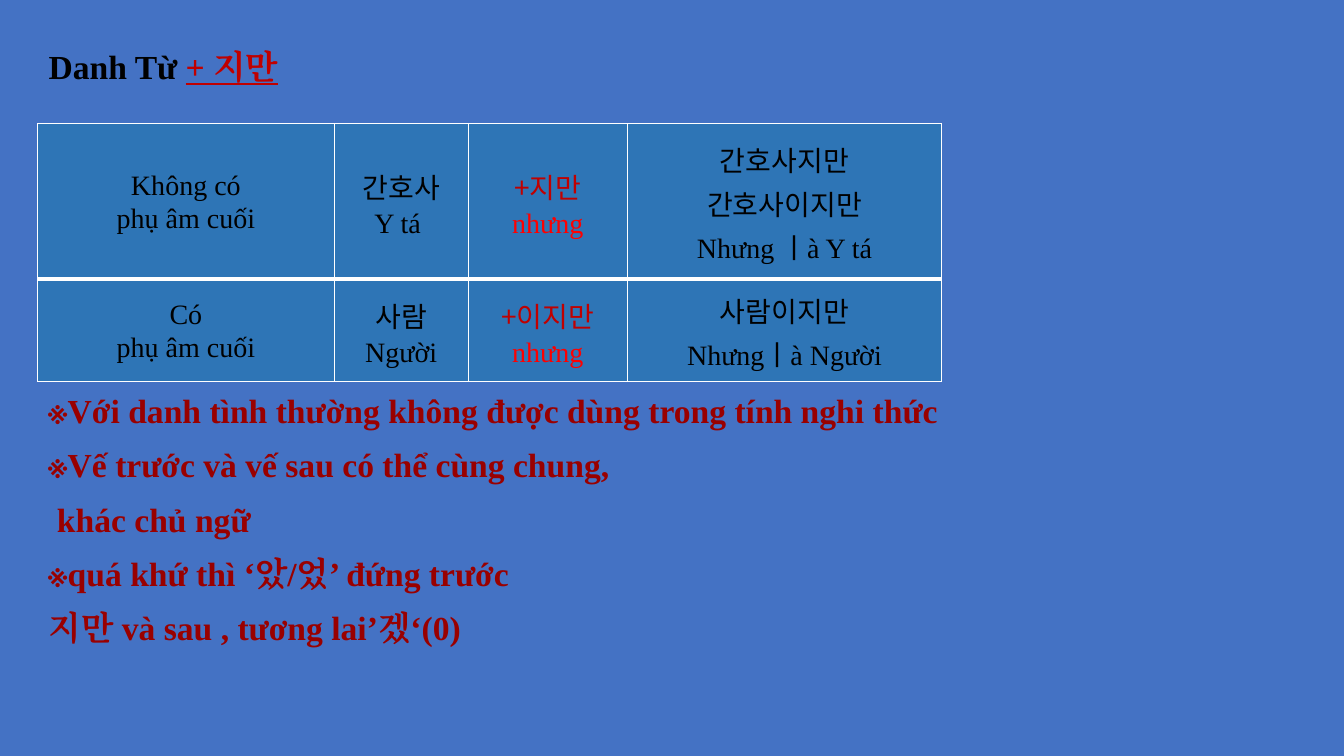
from dataclasses import dataclass

import pptx
import pptx.dml.color
import pptx.enum.text
import pptx.oxml
import pptx.oxml.ns
import pptx.util
from pptx.enum.text import MSO_ANCHOR, MSO_AUTO_SIZE, PP_ALIGN
from pptx.util import Cm


@dataclass(frozen=True)
class Theme:
    background: str = "4472C4"
    cell: str = "2E75B6"
    border: str = "FFFFFF"
    text: str = "000000"
    ending: str = "C00000"
    meaning: str = "FF0000"
    note: str = "990000"
    latin: str = "Times New Roman"
    korean: str = "Noto Sans CJK KR"
    heading_size: int = 24
    cell_size: int = 20
    line_spacing: float = 1.07
    space_after: int = 8
    thin: int = 1
    thick: int = 3


THEME = Theme()


@dataclass(frozen=True)
class Line:
    text: str
    font: str = THEME.latin
    color: str = THEME.text


@dataclass(frozen=True)
class Box:
    left: float
    top: float
    width: float
    height: float


def korean(text: str, color: str = THEME.text) -> Line:
    return Line(text, THEME.korean, color)


TITLE_BOX = Box(0.97, 0.97, 8.64, 1.27)
TABLE_BOX = Box(0.95, 3.12, 22.78, 6.5)
NOTES_BOX = Box(0.97, 9.63, 25.37, 6.88)
COLUMN_WIDTHS = (7.47, 3.38, 4.01, 7.92)
ROW_HEIGHTS = (3.91, 2.59)

MEANING = Line("nhưng", color=THEME.meaning)
RULES = (
    (
        (Line("Không có"), Line("phụ âm cuối")),
        (korean("간호사"), Line("Y tá ")),
        (korean("+지만", THEME.ending), MEANING),
        (korean("간호사지만"), korean("간호사이지만"), Line("Nhưng ㅣà Y tá")),
    ),
    (
        (Line("Có"), Line("phụ âm cuối")),
        (korean("사람"), Line("Người")),
        (korean("+이지만", THEME.ending), MEANING),
        (korean("사람이지만"), Line("Nhưngㅣà Người")),
    ),
)
NOTES = (
    "※Với danh tình thường không được dùng trong tính nghi thức",
    "※Vế trước và vế sau có thể cùng chung,",
    " khác chủ ngữ ",
    "※quá khứ thì ‘았/었’ đứng trước ",
    "지만 và sau , tương lai’겠‘(0)",
)


def rgb(color: str) -> pptx.dml.color.RGBColor:
    return pptx.dml.color.RGBColor.from_string(color)


def add_text(paragraph, text: str, *, size: int, color: str, font: str = THEME.latin,
             east_asian: str = THEME.latin, bold: bool = False,
             underline: bool = False) -> None:
    run = paragraph.add_run()
    run.text = text
    run.font.name = font
    run.font.size = pptx.util.Pt(size)
    run.font.bold = bold
    run.font.underline = underline
    run.font.color.rgb = rgb(color)
    ea = pptx.oxml.parse_xml(
        f'<a:ea {pptx.oxml.ns.nsdecls("a")} typeface="{east_asian}"/>')
    run.font._element.find(pptx.oxml.ns.qn("a:latin")).addnext(ea)


def format_paragraph(paragraph, alignment: PP_ALIGN, space_after: int = 0) -> None:
    paragraph.alignment = alignment
    paragraph.line_spacing = THEME.line_spacing
    paragraph.space_before = pptx.util.Pt(0)
    paragraph.space_after = pptx.util.Pt(space_after)


def paragraph_at(frame, index: int):
    """Return the frame's first paragraph for index 0, else a new one."""
    return frame.add_paragraph() if index else frame.paragraphs[0]


def remove_bullet(paragraph) -> None:
    properties = paragraph._p.get_or_add_pPr()
    properties.set("marL", "0")
    properties.set("indent", "0")
    properties.append(pptx.oxml.parse_xml(
        f'<a:buNone {pptx.oxml.ns.nsdecls("a")}/>'))


def place(placeholder, box: Box):
    placeholder.left, placeholder.top = Cm(box.left), Cm(box.top)
    placeholder.width, placeholder.height = Cm(box.width), Cm(box.height)
    frame = placeholder.text_frame
    frame.word_wrap = True
    frame.auto_size = MSO_AUTO_SIZE.SHAPE_TO_FIT_TEXT
    frame.vertical_anchor = MSO_ANCHOR.TOP
    return frame


def set_borders(cell, top: int, bottom: int) -> None:
    widths = {"lnL": THEME.thin, "lnR": THEME.thin, "lnT": top, "lnB": bottom}
    properties = cell._tc.get_or_add_tcPr()
    for position, (side, width) in enumerate(widths.items()):
        properties.insert(position, pptx.oxml.parse_xml(
            f'<a:{side} {pptx.oxml.ns.nsdecls("a")} w="{pptx.util.Pt(width)}">'
            f'<a:solidFill><a:srgbClr val="{THEME.border}"/></a:solidFill></a:{side}>'))


def fill_cell(cell, lines: tuple[Line, ...]) -> None:
    cell.fill.solid()
    cell.fill.fore_color.rgb = rgb(THEME.cell)
    cell.vertical_anchor = MSO_ANCHOR.MIDDLE
    cell.margin_left = cell.margin_right = Cm(0.18)
    cell.margin_top = cell.margin_bottom = Cm(0)
    for index, line in enumerate(lines):
        paragraph = paragraph_at(cell.text_frame, index)
        format_paragraph(paragraph, PP_ALIGN.CENTER)
        add_text(paragraph, line.text, size=THEME.cell_size, color=line.color,
                 font=line.font, east_asian=THEME.korean)


def add_title(slide) -> None:
    heading = place(slide.shapes.title, TITLE_BOX).paragraphs[0]
    format_paragraph(heading, PP_ALIGN.JUSTIFY, THEME.space_after)
    add_text(heading, "Danh Từ ", size=THEME.heading_size, color=THEME.text, bold=True)
    add_text(heading, "+ 지만", size=THEME.heading_size, color=THEME.ending,
             bold=True, underline=True)


def add_rules(slide) -> None:
    box = TABLE_BOX
    rules = slide.shapes.add_table(
        len(RULES), len(COLUMN_WIDTHS),
        Cm(box.left), Cm(box.top), Cm(box.width), Cm(box.height)).table
    rules.first_row = rules.horz_banding = False
    for column, width in zip(rules.columns, COLUMN_WIDTHS):
        column.width = Cm(width)
    for row, height in zip(rules.rows, ROW_HEIGHTS):
        row.height = Cm(height)
    edges = (THEME.thin, THEME.thick, THEME.thin)
    for r, rule in enumerate(RULES):
        for c, lines in enumerate(rule):
            cell = rules.cell(r, c)
            fill_cell(cell, lines)
            set_borders(cell, top=edges[r], bottom=edges[r + 1])


def add_notes(slide) -> None:
    frame = place(slide.placeholders[1], NOTES_BOX)
    for index, note in enumerate(NOTES):
        paragraph = paragraph_at(frame, index)
        format_paragraph(paragraph, PP_ALIGN.JUSTIFY, THEME.space_after)
        remove_bullet(paragraph)
        add_text(paragraph, note, size=THEME.heading_size, color=THEME.note, bold=True)


def main() -> None:
    presentation = pptx.Presentation()
    presentation.slide_width, presentation.slide_height = Cm(33.87), Cm(19.05)
    slide = presentation.slides.add_slide(presentation.slide_layouts[1])
    slide.background.fill.solid()
    slide.background.fill.fore_color.rgb = rgb(THEME.background)
    add_title(slide)
    add_rules(slide)
    add_notes(slide)
    presentation.save("out.pptx")


if __name__ == "__main__":
    main()
